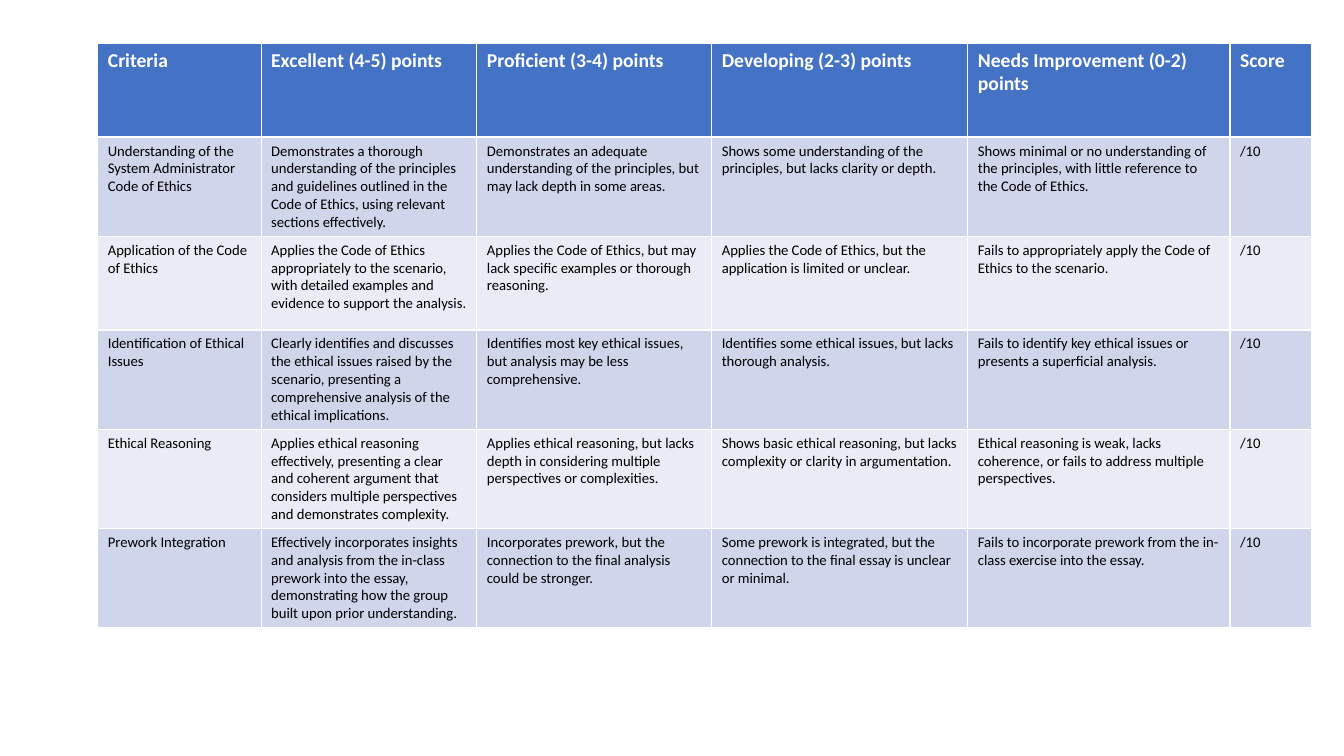
from pptx import Presentation
from pptx.dml.color import RGBColor
from pptx.util import Inches, Pt

HEADER_BLUE = RGBColor(0x44, 0x72, 0xC4)
BAND_DARK = RGBColor(0xCF, 0xD5, 0xEA)
BAND_LIGHT = RGBColor(0xE9, 0xEB, 0xF5)
WHITE = RGBColor(0xFF, 0xFF, 0xFF)
BLACK = RGBColor(0x00, 0x00, 0x00)

COLUMN_WIDTHS = [1.62, 2.14, 2.33, 2.54, 2.6, 0.81]
ROW_HEIGHT = 0.93
SCORE = "/10"

HEADER = [
    "Criteria",
    "Excellent (4-5) points",
    "Proficient (3-4) points",
    "Developing (2-3) points",
    "Needs Improvement (0-2) points",
    "Score",
]
CRITERIA = [
    [
        "Understanding of the System Administrator Code of Ethics",
        "Demonstrates a thorough understanding of the principles and guidelines "
        "outlined in the Code of Ethics, using relevant sections effectively.",
        "Demonstrates an adequate understanding of the principles, but may lack depth in some areas.",
        "Shows some understanding of the principles, but lacks clarity or depth.",
        "Shows minimal or no understanding of the principles, with little reference to the Code of Ethics.",
    ],
    [
        "Application of the Code of Ethics",
        "Applies the Code of Ethics appropriately to the scenario, with detailed "
        "examples and evidence to support the analysis.",
        "Applies the Code of Ethics, but may lack specific examples or thorough reasoning.",
        "Applies the Code of Ethics, but the application is limited or unclear.",
        "Fails to appropriately apply the Code of Ethics to the scenario.",
    ],
    [
        "Identification of Ethical Issues",
        "Clearly identifies and discusses the ethical issues raised by the scenario, "
        "presenting a comprehensive analysis of the ethical implications.",
        "Identifies most key ethical issues, but analysis may be less comprehensive.",
        "Identifies some ethical issues, but lacks thorough analysis.",
        "Fails to identify key ethical issues or presents a superficial analysis.",
    ],
    [
        "Ethical Reasoning",
        "Applies ethical reasoning effectively, presenting a clear and coherent argument "
        "that considers multiple perspectives and demonstrates complexity.",
        "Applies ethical reasoning, but lacks depth in considering multiple perspectives or complexities.",
        "Shows basic ethical reasoning, but lacks complexity or clarity in argumentation.",
        "Ethical reasoning is weak, lacks coherence, or fails to address multiple perspectives.",
    ],
    [
        "Prework Integration",
        "Effectively incorporates insights and analysis from the in-class prework into the "
        "essay, demonstrating how the group built upon prior understanding.",
        "Incorporates prework, but the connection to the final analysis could be stronger.",
        "Some prework is integrated, but the connection to the final essay is unclear or minimal.",
        "Fails to incorporate prework from the in-class exercise into the essay.",
    ],
]

presentation = Presentation()
presentation.slide_width = Inches(13.33)
presentation.slide_height = Inches(7.5)
slide = presentation.slides.add_slide(presentation.slide_layouts[6])

# Rubric table; the default table style draws the white cell borders
rows = [HEADER] + [criterion + [SCORE] for criterion in CRITERIA]
rubric = slide.shapes.add_table(
    len(rows), len(HEADER), Inches(0.97), Inches(0.43),
    Inches(sum(COLUMN_WIDTHS)), Inches(ROW_HEIGHT * len(rows)),
).table
for column, width in zip(rubric.columns, COLUMN_WIDTHS):
    column.width = Inches(width)

# Cell text, fills and fonts
for row_index, texts in enumerate(rows):
    is_header = row_index == 0
    if is_header:
        fill_color = HEADER_BLUE
    else:
        fill_color = BAND_DARK if row_index % 2 else BAND_LIGHT
    rubric.rows[row_index].height = Inches(ROW_HEIGHT)
    for column_index, text in enumerate(texts):
        cell = rubric.cell(row_index, column_index)
        cell.fill.solid()
        cell.fill.fore_color.rgb = fill_color
        cell.text_frame.text = text
        font = cell.text_frame.paragraphs[0].runs[0].font
        font.name = "Calibri"
        font.size = Pt(14 if is_header else 10.5)
        font.bold = is_header
        font.color.rgb = WHITE if is_header else BLACK

presentation.save("out.pptx")
